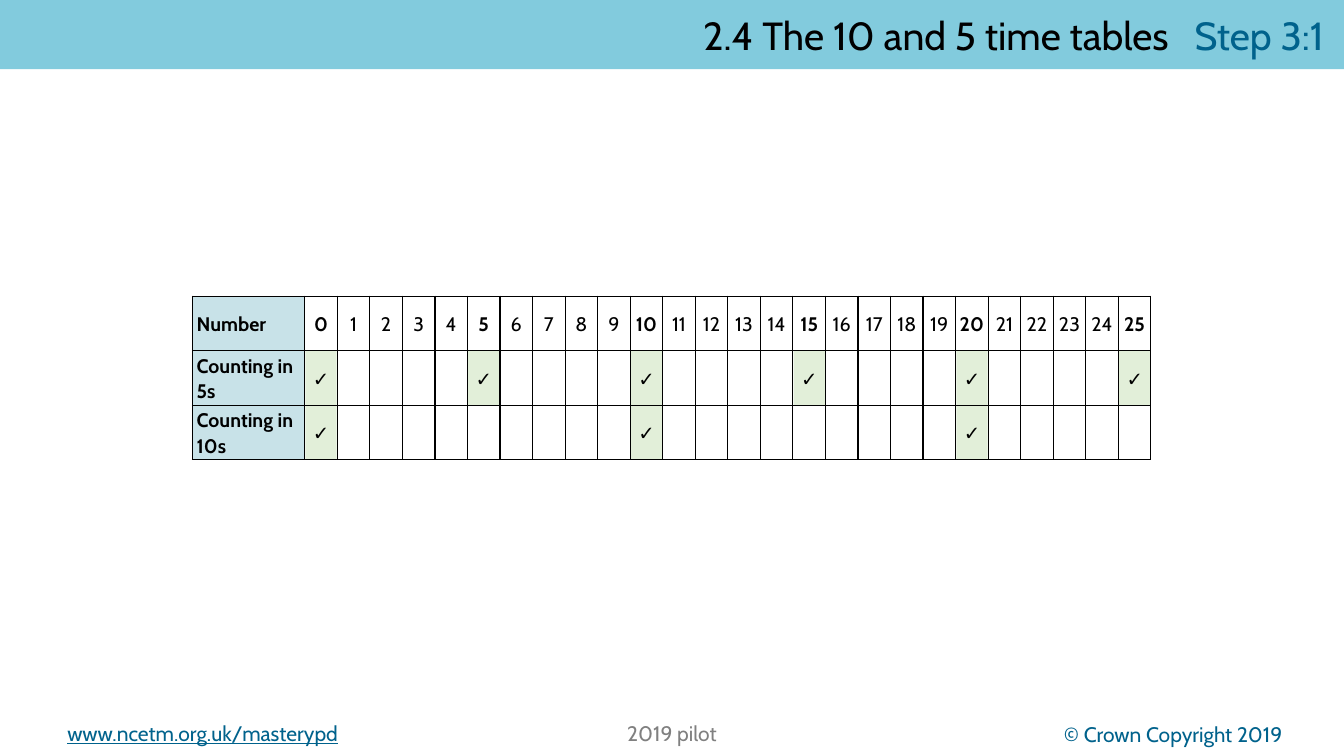
from dataclasses import dataclass

from lxml import etree
from pptx import Presentation
from pptx import util as u
from pptx.dml.color import RGBColor
from pptx.enum import shapes, text
from pptx.oxml import ns

Pt = u.Pt
ALIGN = text.PP_ALIGN


@dataclass(frozen=True)
class Theme:
    banner: str = "82CBDD"
    label: str = "C8E2E8"
    highlight: str = "E2EFD9"
    accent: str = "00628C"
    ink: str = "000000"
    muted: str = "808080"
    font: str = "Cabin"
    tick_font: str = "Comic Neue"
    title_size: int = 28
    footer_size: int = 15
    table_size: int = 14


class CountingSlide:
    def __init__(self, slide, theme):
        self.slide = slide
        self.theme = theme

    def style(self, run, size, colour, font=None, bold=None, underline=None):
        run.font.name = font or self.theme.font
        run.font.size = Pt(size)
        run.font.color.rgb = RGBColor.from_string(colour)
        run.font.bold = bold
        run.font.underline = underline

    def rect(self, left, top, width, height, fill):
        block = self.slide.shapes.add_shape(
            shapes.MSO_SHAPE.RECTANGLE, Pt(left), Pt(top), Pt(width), Pt(height))
        block.shadow.inherit = False
        block.fill.solid()
        block.fill.fore_color.rgb = RGBColor.from_string(fill)
        block.line.fill.background()
        return block

    def banner(self, topic, step):
        frame = self.rect(0, 0, 960, 49.5, self.theme.banner).text_frame
        frame.word_wrap = True
        frame.vertical_anchor = text.MSO_ANCHOR.MIDDLE
        frame.margin_left = frame.margin_right = Pt(14.4)
        heading = frame.paragraphs[0]
        heading.text = topic + "\t"
        heading.alignment = ALIGN.RIGHT
        indent = heading._p.get_or_add_pPr()
        indent.set("marL", str(Pt(27)))
        indent.set("indent", str(-Pt(27)))
        heading.add_run().text = step
        for run, colour in zip(heading.runs, (self.theme.ink, self.theme.accent)):
            self.style(run, self.theme.title_size, colour)

    def text(self, words, left, top, width, height, align, wrap=True, **look):
        box = self.slide.shapes.add_textbox(Pt(left), Pt(top), Pt(width), Pt(height))
        frame = box.text_frame
        frame.word_wrap = wrap
        frame.auto_size = text.MSO_AUTO_SIZE.SHAPE_TO_FIT_TEXT
        frame.text = words
        frame.paragraphs[0].alignment = align
        self.style(frame.paragraphs[0].runs[0], **look)

    def footer(self, words, left, top, align, colour, underline=None):
        self.text(words, left, top, 295.2, 25.2, align, size=self.theme.footer_size,
                  colour=colour, underline=underline)

    def tick(self, centre, top):
        self.text("✓", centre - 13, top, 26, 24.5, ALIGN.CENTER, wrap=False,
                  size=self.theme.table_size, colour=self.theme.ink,
                  font=self.theme.tick_font)

    def borders(self, cell):
        properties = cell._tc.get_or_add_tcPr()
        for place, side in enumerate(("lnL", "lnR", "lnT", "lnB")):
            line = etree.Element(ns.qn("a:" + side), w=str(Pt(1)))
            fill = etree.SubElement(line, ns.qn("a:solidFill"))
            etree.SubElement(fill, ns.qn("a:srgbClr"), val=self.theme.ink)
            properties.insert(place, line)

    def cell(self, cell, words, align, bold, inset):
        cell.vertical_anchor = text.MSO_ANCHOR.MIDDLE
        cell.margin_left = cell.margin_right = Pt(inset)
        cell.margin_top = cell.margin_bottom = 0
        cell.text_frame.text = words
        line = cell.text_frame.paragraphs[0]
        line.alignment = align
        line.line_spacing = 1.07
        self.style(line.runs[0], self.theme.table_size, self.theme.ink, bold=bold)

    def number_table(self, labels, numbers, left, top, label_width, width, height):
        grid = self.slide.shapes.add_table(
            len(labels), len(numbers) + 1, Pt(left), Pt(top),
            Pt(label_width + width * len(numbers)), Pt(height * len(labels))).table
        grid.first_row = grid.horz_banding = False
        for column in grid.columns:
            column.width = Pt(width)
        grid.columns[0].width = Pt(label_width)
        for row in grid.rows:
            row.height = Pt(height)
        for cell in grid.iter_cells():
            cell.fill.background()
            self.borders(cell)
        for row, label in enumerate(labels):
            name = grid.cell(row, 0)
            name.fill.solid()
            name.fill.fore_color.rgb = RGBColor.from_string(self.theme.label)
            self.cell(name, label, ALIGN.LEFT, True, 3)
        for column, number in enumerate(numbers, 1):
            self.cell(grid.cell(0, column), str(number), ALIGN.CENTER,
                      number % 5 == 0, 0)


def main():
    deck = Presentation()
    deck.slide_width, deck.slide_height = Pt(960), Pt(540)
    theme = Theme()
    page = CountingSlide(deck.slides.add_slide(deck.slide_layouts[6]), theme)

    page.footer("© Crown Copyright 2019", 628, 512, ALIGN.RIGHT, theme.accent)
    page.footer("www.ncetm.org.uk/masterypd", 41, 511.2, ALIGN.LEFT, theme.accent, True)
    page.footer("2019 pilot", 332.4, 511.2, ALIGN.CENTER, theme.muted)
    page.banner("2.4 The 10 and 5 time tables", "Step 3:1")

    left, top, label_width, width, height = 137.5, 211.6, 80.2, 23.25, 38.9
    numbers = range(26)
    steps = (5, 10)
    centres = {n: left + label_width + width * (n + 0.5) for n in numbers}

    for number in numbers[::5]:
        counted = sum(number % step == 0 for step in steps)
        page.rect(centres[number] - 11.2, top + height, 22.4, height * counted,
                  theme.highlight)
    labels = ["Number"] + [f"Counting in {step}s" for step in steps]
    page.number_table(labels, numbers, left, top, label_width, width, height)
    for number in numbers[::5]:
        for row, step in enumerate(steps, 1):
            if number % step == 0:
                page.tick(centres[number], top + height * row + 8)

    deck.save("out.pptx")


if __name__ == "__main__":
    main()
